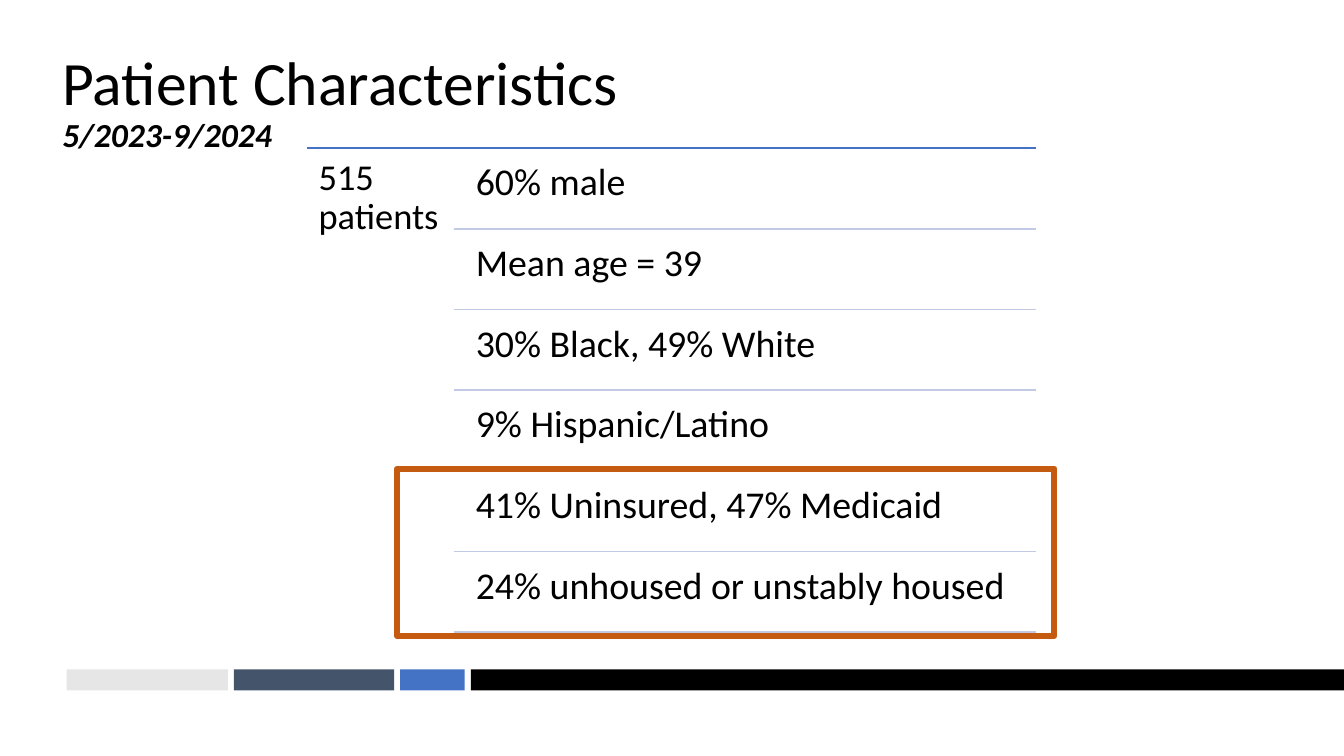
import pptx
import pptx.util
import pptx.dml.color
import pptx.enum.shapes
import pptx.enum.text
import pptx.oxml.ns
from dataclasses import dataclass
from lxml import etree


@dataclass(frozen=True)
class Theme:
    font: str = "Calibri"
    ink: str = "000000"
    blue: str = "4472C4"
    slate: str = "44546A"
    grey: str = "E7E6E6"
    pale: str = "C1C9E4"
    rust: str = "C55A11"
    title: int = 44
    date: int = 24
    label: int = 26
    fact: int = 27
    thin: float = 1
    thick: float = 4.5


def rgb(code):
    return pptx.dml.color.RGBColor.from_string(code)


def write(para, text, size, font, color, bold=False, italic=False):
    run = para.add_run()
    run.text = text
    style = run.font
    style.name, style.size = font, pptx.util.Pt(size)
    style.bold, style.italic = bold, italic
    style.color.rgb = rgb(color)


class Page:
    """Places elements on a grid of 100 columns by 100 rows."""

    def __init__(self, deck, theme):
        self.theme = theme
        self.wide, self.high = deck.slide_width, deck.slide_height
        self.slide = deck.slides.add_slide(deck.slide_layouts[6])

    def grid(self, col, row):
        return round(self.wide * col / 100), round(self.high * row / 100)

    def rect(self, col, row, cols, rows, fill=None, line=None):
        shape = self.slide.shapes.add_shape(
            pptx.enum.shapes.MSO_SHAPE.RECTANGLE,
            *self.grid(col, row), *self.grid(cols, rows))
        shape.shadow.inherit = False
        if fill:
            shape.fill.solid()
            shape.fill.fore_color.rgb = rgb(fill)
        else:
            shape.fill.background()
        if line:
            shape.line.color.rgb = rgb(line)
            shape.line.width = pptx.util.Pt(self.theme.thick)
        else:
            shape.line.fill.background()

    def rule(self, left, right, row, color):
        line = self.slide.shapes.add_connector(
            pptx.enum.shapes.MSO_CONNECTOR.STRAIGHT,
            *self.grid(left, row), *self.grid(right, row))
        line.line.color.rgb = rgb(color)
        line.line.width = pptx.util.Pt(self.theme.thin)
        etree.SubElement(line._element.spPr, pptx.oxml.ns.qn("a:effectLst"))

    def text(self, col, row, cols, rows, text, size, inset=None):
        """Adds a text box and returns its paragraph."""
        box = self.slide.shapes.add_textbox(
            *self.grid(col, row), *self.grid(cols, rows))
        frame = box.text_frame
        frame.word_wrap = True
        if inset is not None:
            gap = pptx.util.Inches(inset)
            frame.margin_left = frame.margin_right = gap
            frame.margin_top = frame.margin_bottom = gap
        para = frame.paragraphs[0]
        para.line_spacing = 0.9
        write(para, text, size, self.theme.font, self.theme.ink)
        return para

    def title(self, text, date):
        look = self.theme
        para = self.text(3.9, 4, 86.25, 19.33, text, look.title)
        para.add_line_break()
        write(para, date, look.date, look.font, look.ink,
              bold=True, italic=True)
        frame = self.slide.shapes[-1].text_frame
        frame.vertical_anchor = pptx.enum.text.MSO_ANCHOR.MIDDLE

    def facts(self, label, items):
        """Lists items beside a label, with a rule under each item."""
        look = self.theme
        left, mid, right = 22.88, 33.75, 77.1
        top, pitch, inset = 19.6, 10.67, 0.11
        self.rule(left, right, top, look.blue)
        self.text(left, top, 10.8, 64.53, label, look.label, inset)
        for i, item in enumerate(items):
            row = top + i * pitch
            self.text(34.58, row + 0.53, 42.52, 10.13, item, look.fact, inset)
            self.rule(mid, right, row + pitch, look.pale)


def main():
    deck = pptx.Presentation()
    deck.slide_width = pptx.util.Inches(13.33)
    deck.slide_height = pptx.util.Inches(7.5)
    look = Theme()
    page = Page(deck, look)
    for col, cols, fill in [(35.03, 64.97, look.ink), (29.78, 4.8, look.blue),
                            (17.4, 11.93, look.slate), (4.95, 12, look.grey)]:
        page.rect(col, 88.53, cols, 2.8, fill=fill)
    page.title("Patient Characteristics", "5/2023-9/2024")
    page.facts("515 patients", [
        "60% male",
        "Mean age = 39",
        "30% Black, 49% White",
        "9% Hispanic/Latino",
        "41% Uninsured, 47% Medicaid",
        "24% unhoused or unstably housed",
    ])
    page.rect(29.55, 62, 48.9, 22.13, line=look.rust)
    deck.save("out.pptx")


if __name__ == "__main__":
    main()
